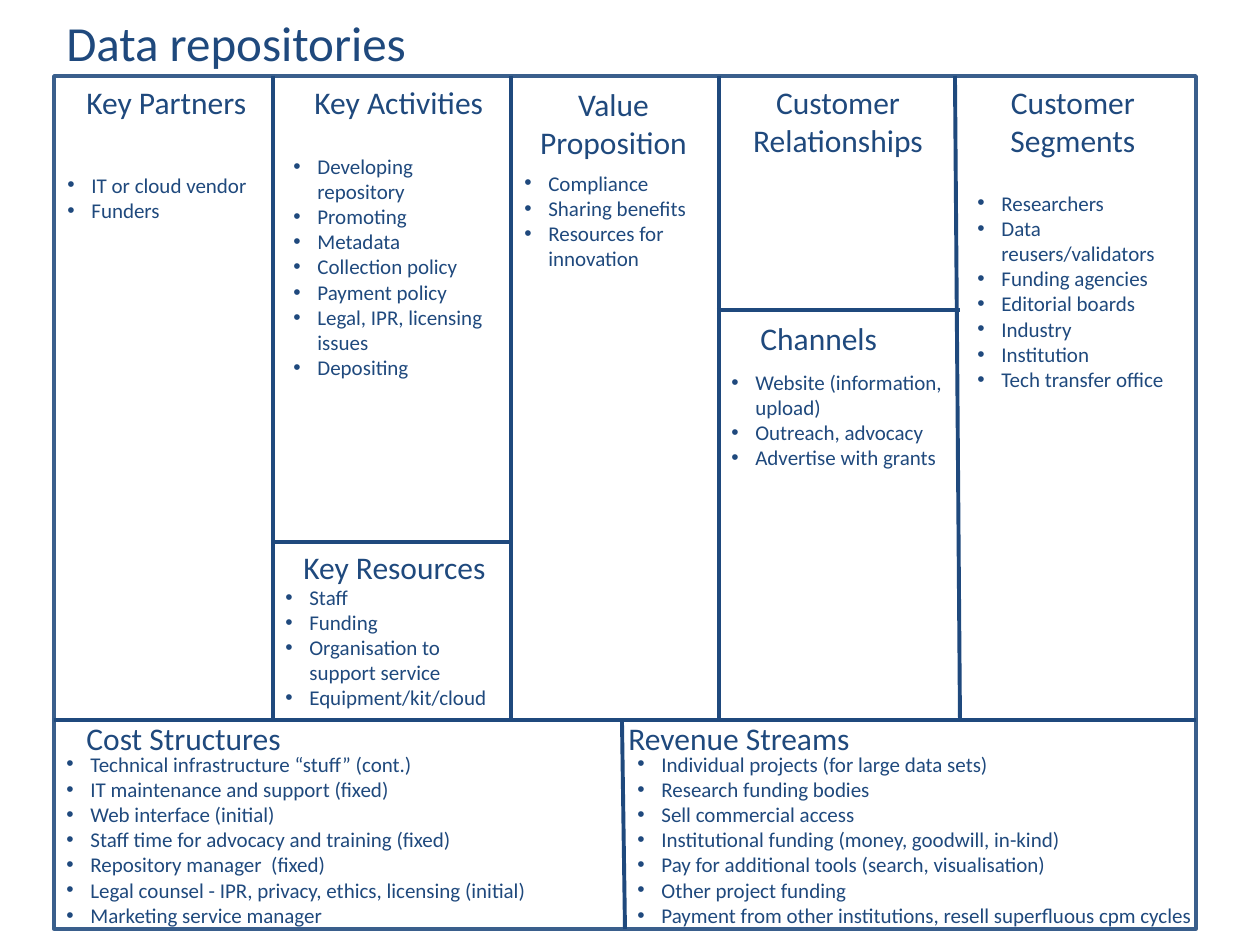
from pptx import Presentation
from pptx.dml.color import RGBColor
from pptx.enum.shapes import MSO_CONNECTOR, MSO_SHAPE
from pptx.enum.text import MSO_AUTO_SIZE, PP_ALIGN
from pptx.oxml.ns import qn
from pptx.util import Emu, Pt
from lxml.etree import SubElement

NAVY = "1F497D"


def px(n):
    return Emu(round(n * 914400 / 126))


def paint(color_format, color):
    color_format.rgb = RGBColor.from_string(color)


prs = Presentation()
prs.slide_width, prs.slide_height = px(1260), px(945)
s = prs.slides.add_slide(prs.slide_layouts[6])

frame = s.shapes.add_shape(MSO_SHAPE.RECTANGLE, px(54), px(76), px(1142), px(853))
frame.shadow.inherit = False
frame.fill.background()
frame.line.width = Pt(2)
paint(frame.line.color, "3A5F8C")

dividers = [
    (273, 76, 273, 720),
    (955, 76, 960, 720),
    (511, 76, 511, 720),
    (719, 76, 719, 720),
    (273, 542, 512, 542),
    (717, 310, 960, 310),
    (54, 720, 1196, 720),
    (622, 720, 625, 929),
]
for ends in dividers:
    line = s.shapes.add_connector(MSO_CONNECTOR.STRAIGHT, *[px(n) for n in ends])
    line.line.width = Pt(2.25)
    paint(line.line.color, NAVY)
    SubElement(line._element.spPr, qn("a:effectLst"))
line.end_connect(frame, 2)

headings = [
    ("Key Partners", 74, 77, 187, 50, 18, False),
    ("Key Activities", 302, 77, 197, 50, 18, False),
    ("Value Proposition", 517, 79, 193, 89, 18, True),
    ("Customer Relationships", 729, 77, 218, 89, 18, True),
    ("Customer Segments", 965, 77, 216, 89, 18, True),
    ("Key Resources", 291, 542, 209, 50, 18, False),
    ("Channels", 748, 313, 144, 50, 18, False),
    ("Cost Structures", 74, 713, 222, 50, 18, False),
    ("Revenue Streams", 616, 713, 249, 50, 18, False),
    ("Data repositories", 54, 6, 379, 72, 28, False),
]
for text, x, y, w, h, size, centred in headings:
    tf = s.shapes.add_textbox(px(x), px(y), px(w), px(h)).text_frame
    tf.word_wrap = centred
    tf.auto_size = MSO_AUTO_SIZE.SHAPE_TO_FIT_TEXT
    tf.text = text
    p = tf.paragraphs[0]
    p.alignment = PP_ALIGN.CENTER if centred else PP_ALIGN.LEFT
    r = p.runs[0]
    r.font.name, r.font.size = "Calibri", Pt(size)
    paint(r.font.color, NAVY)

lists = [
    (55, 166, 218, 115, ["IT or cloud vendor", "Funders"]),
    (281, 147, 231, 344, [
        "Developing repository", "Promoting", "Metadata", "Collection policy",
        "Payment policy", "Legal, IPR, licensing issues", "Depositing"]),
    (273, 578, 251, 140, [
        "Staff", "Funding", "Organisation to support service", "Equipment/kit/cloud"]),
    (965, 184, 218, 267, [
        "Researchers", "Data reusers/validators", "Funding agencies",
        "Editorial boards", "Industry", "Institution", "Tech transfer office"]),
    (54, 745, 547, 190, [
        "Technical infrastructure “stuff” (cont.)",
        "IT maintenance and support (fixed)",
        "Web interface (initial)",
        "Staff time for advocacy and training (fixed)",
        "Repository manager  (fixed)",
        "Legal counsel - IPR, privacy, ethics, licensing (initial)",
        "Marketing service manager"]),
    (719, 363, 251, 140, [
        "Website (information, upload)", "Outreach, advocacy", "Advertise with grants"]),
    (625, 745, 600, 190, [
        "Individual projects (for large data sets)",
        "Research funding bodies",
        "Sell commercial access",
        "Institutional funding (money, goodwill, in-kind)",
        "Pay for additional tools (search, visualisation)",
        "Other project funding",
        "Payment from other institutions, resell superfluous cpm cycles"]),
    (512, 164, 200, 165, ["Compliance", "Sharing benefits", "Resources for innovation"]),
]
for x, y, w, h, items in lists:
    tf = s.shapes.add_textbox(px(x), px(y), px(w), px(h)).text_frame
    tf.word_wrap = True
    tf.auto_size = MSO_AUTO_SIZE.SHAPE_TO_FIT_TEXT
    tf.text = "\n".join(items)
    for p in tf.paragraphs:
        pPr = p._p.get_or_add_pPr()
        pPr.set("marL", str(px(24)))
        pPr.set("indent", str(-px(24)))
        SubElement(pPr, qn("a:buFont")).set("typeface", "Arial")
        SubElement(pPr, qn("a:buChar")).set("char", "•")
        r = p.runs[0]
        r.font.name, r.font.size = "Calibri", Pt(12)
        paint(r.font.color, NAVY)

prs.save("out.pptx")
